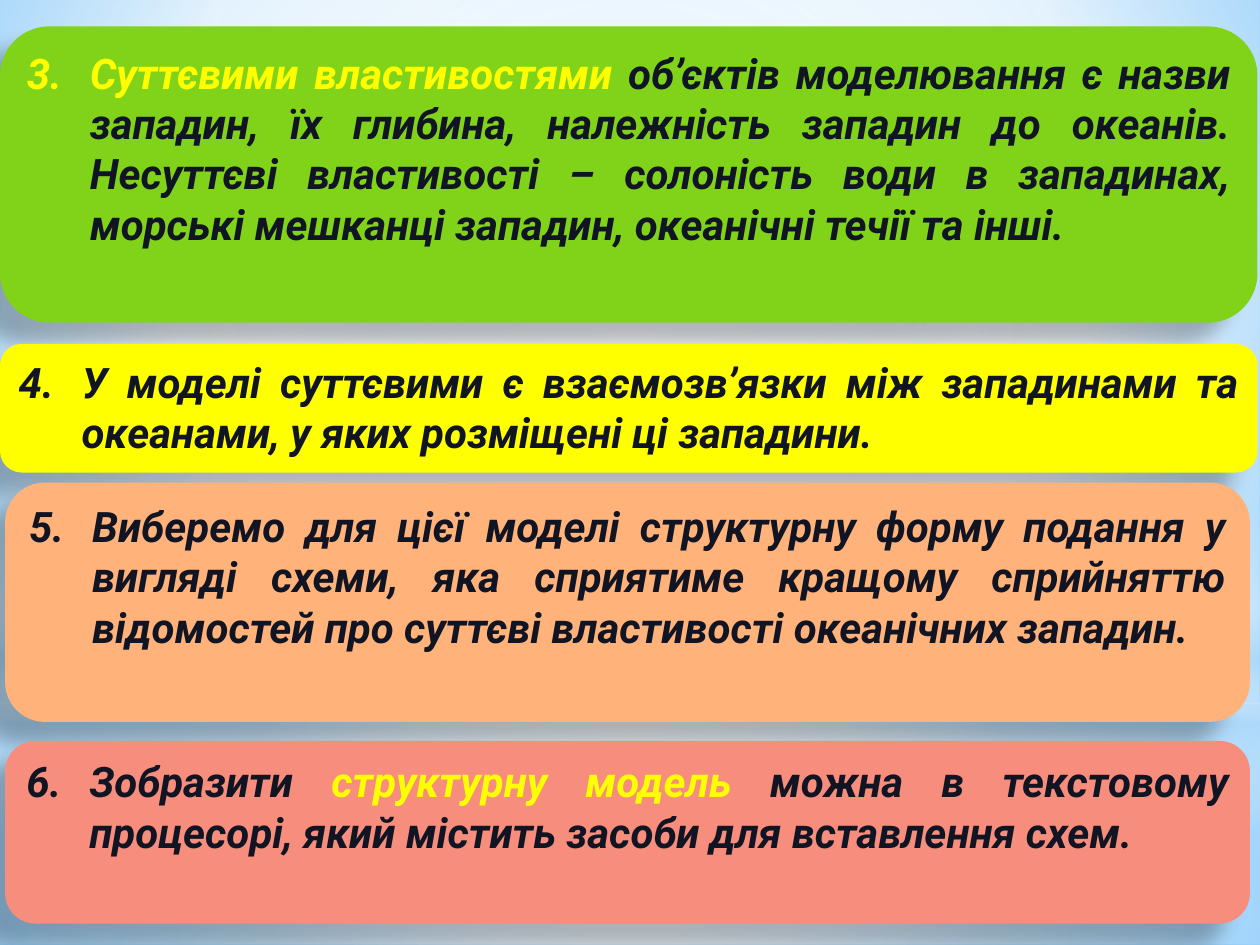
import lxml.etree
import pptx
import pptx.dml.color
import pptx.enum.shapes
import pptx.enum.text
import pptx.oxml
import pptx.oxml.ns
import pptx.util

Inches = pptx.util.Inches
SHAPE = pptx.enum.shapes.MSO_SHAPE
qn = pptx.oxml.ns.qn

DARK, YELLOW = "111422", "FFFF00"
WHITE, PALE_BLUE = "FFFFFF", "B4DCFA"
CENTRE = (50, 50, 50, 50)

# left, top, width, height, fill, [(text, colour)]; numbering starts at 3
CARDS = [
    (0, 0.21, 9.98, 2.35, "81D31A", [
        ("Суттєвими властивостями ", YELLOW),
        ("об’єктів моделювання є назви западин, їх глибина, належність западин "
         "до океанів. Несуттєві властивості – солоність води в западинах, "
         "морські мешканці западин, океанічні течії та інші.", DARK)]),
    (0, 2.73, 9.98, 1.02, "FFFF00", [
        ("У моделі суттєвими є взаємозв’язки між западинами та океанами, "
         "у яких розміщені ці западини.", DARK)]),
    (0.04, 3.83, 9.88, 1.9, "FFB37A", [
        ("Виберемо для цієї моделі структурну форму подання у вигляді схеми, "
         "яка сприятиме кращому сприйняттю відомостей про суттєві властивості "
         "океанічних западин.", DARK)]),
    (0.04, 5.88, 9.88, 1.45, "F78D7C", [
        ("Зобразити ", DARK),
        ("структурну модель ", YELLOW),
        ("можна в текстовому процесорі, який містить засоби "
         "для вставлення схем.", DARK)]),
]

# shape, top, height, stops (position, colour, opacity), gradient direction
GLOWS = [
    (SHAPE.RECTANGLE, 5.58, 1.92,
     [(0, WHITE, 91), (37, WHITE, 76), (100, PALE_BLUE, 79)], {"to": CENTRE}),
    (SHAPE.RECTANGLE, 0, 5.58,
     [(0, WHITE, 89), (48, WHITE, 62), (100, PALE_BLUE, 79)], {"to": CENTRE}),
    (SHAPE.RECTANGLE, 4.12, 2.5,
     [(0, WHITE, 0), (29, WHITE, 30), (45, PALE_BLUE, 40), (55, WHITE, 26),
      (65, PALE_BLUE, 60), (100, WHITE, 0)], {"angle": 90}),
    (SHAPE.OVAL, 1.75, 5.58, [(0, WHITE, 100), (56, WHITE, 0)], {"to": CENTRE}),
]


def rgb(value):
    return pptx.dml.color.RGBColor.from_string(value)


def add_child(parent, tag, **attributes):
    child = lxml.etree.SubElement(parent, qn(tag))
    for name, value in attributes.items():
        child.set(name, str(value))
    return child


def add_colour(parent, colour, opacity):
    node = add_child(parent, "a:srgbClr", val=colour)
    if opacity < 100:
        add_child(node, "a:alpha", val=opacity * 1000)


def set_gradient(owner, fill, stops, to=None, angle=0):
    """Fill a shape or background; `to` makes the gradient circular."""
    fill.gradient()
    grad = owner.element.find(".//" + qn("a:gradFill"))
    for child in list(grad):
        grad.remove(child)
    stop_list = add_child(grad, "a:gsLst")
    for position, colour, opacity in stops:
        add_colour(add_child(stop_list, "a:gs", pos=position * 1000), colour, opacity)
    if to:
        circle = add_child(grad, "a:path", path="circle")
        sides = {side: value * 1000 for side, value in zip("ltrb", to)}
        add_child(circle, "a:fillToRect", **sides)
    else:
        add_child(grad, "a:lin", ang=angle * 60000, scaled=0)


def add_plain_shape(slide, kind, left, top, width, height):
    sp = slide.shapes.add_shape(kind, Inches(left), Inches(top),
                                Inches(width), Inches(height))
    sp.shadow.inherit = False
    sp.line.fill.background()
    return sp


def set_shadow(sp, colour="000000", opacity=28, blur=11.8, distance=19.7, angle=141):
    effects = sp.element.spPr.find(qn("a:effectLst"))
    outer = add_child(effects, "a:outerShdw", blurRad=pptx.util.Pt(blur),
                      dist=pptx.util.Pt(distance), dir=angle * 60000,
                      algn="tl", rotWithShape=0)
    add_colour(outer, colour, opacity)


def number_paragraph(p, start, indent=0.5):
    pPr = p._p.get_or_add_pPr()
    pPr.set("marL", str(Inches(indent)))
    pPr.set("indent", str(-Inches(indent)))
    add_child(pPr, "a:buFont", typeface="+mj-lt")
    add_child(pPr, "a:buAutoNum", type="arabicPeriod", startAt=start)


def add_text(p, text, colour=DARK, size=24, font="Roboto", bold=True, italic=True):
    r = p.add_run()
    r.text = text
    r.font.name = font
    r.font.size = pptx.util.Pt(size)
    r.font.bold = bold
    r.font.italic = italic
    r.font.color.rgb = rgb(colour)


def add_card(slide, number, left, top, width, height, fill, runs):
    sp = add_plain_shape(slide, SHAPE.ROUNDED_RECTANGLE, left, top, width, height)
    sp.fill.solid()
    sp.fill.fore_color.rgb = rgb(fill)
    set_shadow(sp)
    tf = sp.text_frame
    tf.word_wrap = True
    tf.vertical_anchor = pptx.enum.text.MSO_ANCHOR.TOP
    p = tf.paragraphs[0]
    p.alignment = pptx.enum.text.PP_ALIGN.JUSTIFY
    number_paragraph(p, number)
    for text, colour in runs:
        add_text(p, text, colour=colour)


def main():
    prs = pptx.Presentation()
    prs.slide_width, prs.slide_height = Inches(10), Inches(7.5)
    slide = prs.slides.add_slide(prs.slide_layouts[6])
    set_gradient(slide, slide.background.fill,
                 [(0, "9ED5FF", 100), (60, WHITE, 100), (100, "5BB9FF", 100)],
                 to=(20, 10, 20, 60))
    for kind, top, height, stops, direction in GLOWS:
        sp = add_plain_shape(slide, kind, 0, top, 10, height)
        set_gradient(sp, sp.fill, stops, **direction)
    for number, card in enumerate(CARDS, start=3):
        add_card(slide, number, *card)
    prs.save("out.pptx")


if __name__ == "__main__":
    main()
